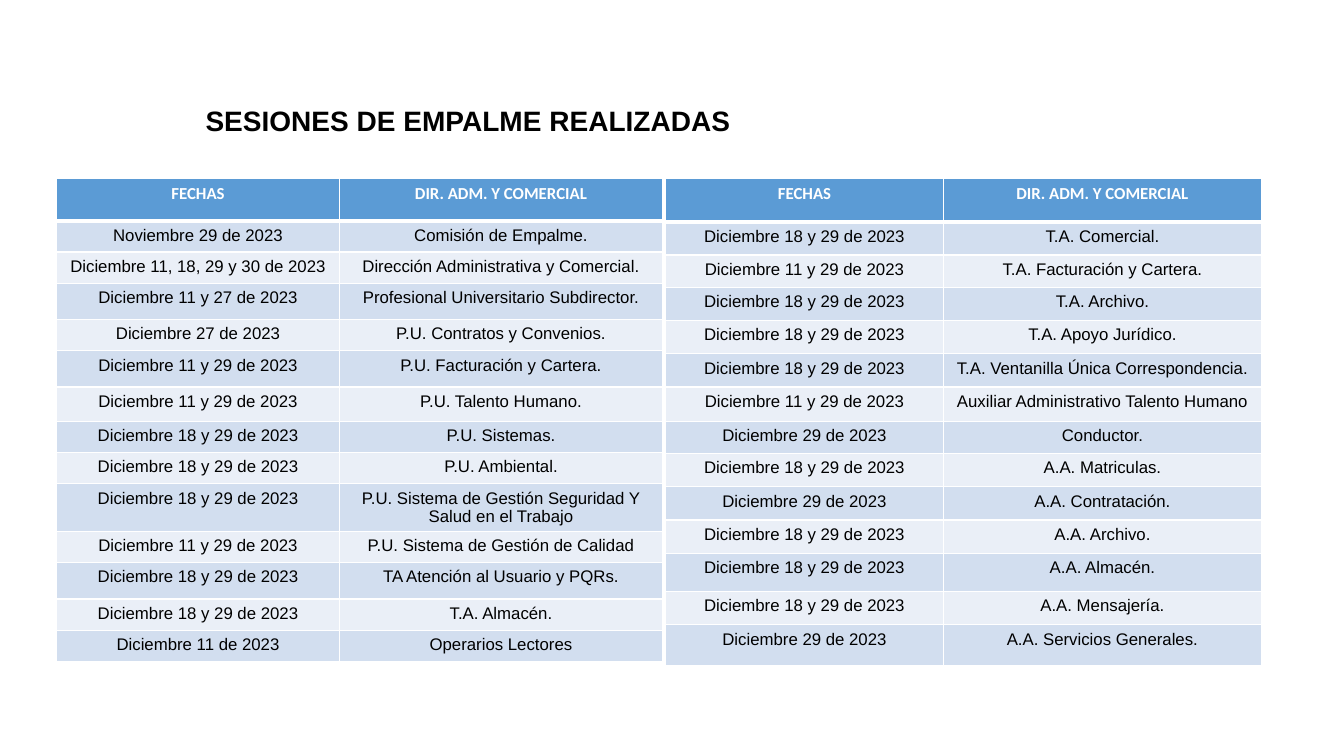
from pptx import Presentation
from pptx import util as u
from pptx.dml.color import RGBColor
from pptx.enum import text
from pptx.oxml import parse_xml
from pptx.oxml.ns import nsdecls

# Colours
BLACK = RGBColor(0x00, 0x00, 0x00)
WHITE = RGBColor(0xFF, 0xFF, 0xFF)
HEADER_BLUE = RGBColor(0x5B, 0x9B, 0xD5)
BAND_DARK = RGBColor(0xD2, 0xDE, 0xEF)
BAND_LIGHT = RGBColor(0xEA, 0xEF, 0xF7)

PX = 9144  # EMU in one px, 100 px to the inch
HEADINGS = ("FECHAS", "DIR. ADM. Y COMERCIAL")
DEC_11_29 = "Diciembre 11 y 29"
DEC_18_29 = "Diciembre 18 y 29"
DEC_29 = "Diciembre 29"

# Sessions: row height, date within 2023, area
LEFT_SESSIONS = [
    (31, "Noviembre 29", "Comisión de Empalme."),
    (31, "Diciembre 11, 18, 29 y 30", "Dirección Administrativa y Comercial."),
    (36, "Diciembre 11 y 27", "Profesional Universitario Subdirector."),
    (31, "Diciembre 27", "P.U. Contratos y Convenios."),
    (36, DEC_11_29, "P.U. Facturación y Cartera."),
    (34, DEC_11_29, "P.U. Talento Humano."),
    (31, DEC_18_29, "P.U. Sistemas."),
    (31, DEC_18_29, "P.U. Ambiental."),
    (47, DEC_18_29, "P.U. Sistema de Gestión Seguridad Y Salud en el Trabajo"),
    (31, DEC_11_29, "P.U. Sistema de Gestión de Calidad"),
    (36, DEC_18_29, "TA Atención al Usuario y PQRs."),
    (31, DEC_18_29, "T.A. Almacén."),
    (31, "Diciembre 11", "Operarios Lectores"),
]
RIGHT_SESSIONS = [
    (33, DEC_18_29, "T.A. Comercial."),
    (32, DEC_11_29, "T.A. Facturación y Cartera."),
    (33, DEC_18_29, "T.A. Archivo."),
    (33, DEC_18_29, "T.A. Apoyo Jurídico."),
    (33, DEC_18_29, "T.A. Ventanilla Única Correspondencia."),
    (34, DEC_11_29, "Auxiliar Administrativo Talento Humano"),
    (32, DEC_29, "Conductor."),
    (33, DEC_18_29, "A.A. Matriculas."),
    (33, DEC_29, "A.A. Contratación."),
    (33, DEC_18_29, "A.A. Archivo."),
    (38, DEC_18_29, "A.A. Almacén."),
    (33, DEC_18_29, "A.A. Mensajería."),
    (40, DEC_29, "A.A. Servicios Generales."),
]


class SessionSlide:
    """Keeps the style and the current page."""

    def __init__(self, deck):
        self.page = deck.slides.add_slide(deck.slide_layouts[5])

    def add_span(self, para, words, size, font, color, bold):
        para.alignment = text.PP_ALIGN.CENTER
        span = para.add_run()
        span.text = words
        span.font.size = u.Pt(size)
        span.font.name = font
        span.font.bold = bold
        span.font.color.rgb = color

    def title(self, words, left, top, width, height):
        box = self.page.shapes.title
        box.left, box.top = left * PX, top * PX
        box.width, box.height = width * PX, height * PX
        frame = box.text_frame
        frame.word_wrap = True
        frame.auto_size = text.MSO_AUTO_SIZE.NONE
        frame.vertical_anchor = text.MSO_ANCHOR.BOTTOM
        frame.margin_left = frame.margin_right = 10 * PX
        frame.margin_top = frame.margin_bottom = 10 * PX
        frame.paragraphs[0].line_spacing = 0.9
        self.add_span(frame.paragraphs[0], words, 20, "Arial", BLACK, True)

    def borders(self, cell, top, bottom):
        # Border lines come before the fill in the cell properties
        sides = (("L", 1), ("R", 1), ("T", top), ("B", bottom))
        for index, (side, points) in enumerate(sides):
            line = parse_xml(
                f'<a:ln{side} {nsdecls("a")} w="{u.Pt(points)}"><a:solidFill>'
                f'<a:srgbClr val="{WHITE}"/></a:solidFill></a:ln{side}>')
            cell._tc.get_or_add_tcPr().insert(index, line)

    def cell(self, cell, words, row):
        header = row == 0
        cell.fill.solid()
        if header:
            cell.fill.fore_color.rgb = HEADER_BLUE
        else:
            cell.fill.fore_color.rgb = BAND_DARK if row % 2 else BAND_LIGHT
        self.borders(cell, top=3 if row == 1 else 1, bottom=3 if header else 1)
        self.add_span(cell.text_frame.paragraphs[0], words, 12,
                      "Calibri" if header else "Arial",
                      WHITE if header else BLACK, header)

    def table(self, left, top, widths, header_height, sessions):
        heights = [header_height] + [session[0] for session in sessions]
        lines = [HEADINGS] + [(f"{date} de 2023", area) for _, date, area in sessions]
        table = self.page.shapes.add_table(
            len(lines), len(widths), left * PX, top * PX,
            sum(widths) * PX, sum(heights) * PX).table
        table.horz_banding = False
        for column, width in zip(table.columns, widths):
            column.width = width * PX
        for row, (height, line) in enumerate(zip(heights, lines)):
            table.rows[row].height = height * PX
            for column, words in enumerate(line):
                self.cell(table.cell(row, column), words, row)


def main():
    deck = Presentation()
    deck.slide_width, deck.slide_height = 1333 * PX, 750 * PX
    slide = SessionSlide(deck)

    # Title
    slide.title("SESIONES DE EMPALME REALIZADAS ", 107, 88, 722, 58)

    # Two tables side by side
    slide.table(56, 177, (281, 320), 42, LEFT_SESSIONS)
    slide.table(660, 177, (276, 315), 43, RIGHT_SESSIONS)

    deck.save("out.pptx")


if __name__ == "__main__":
    main()
